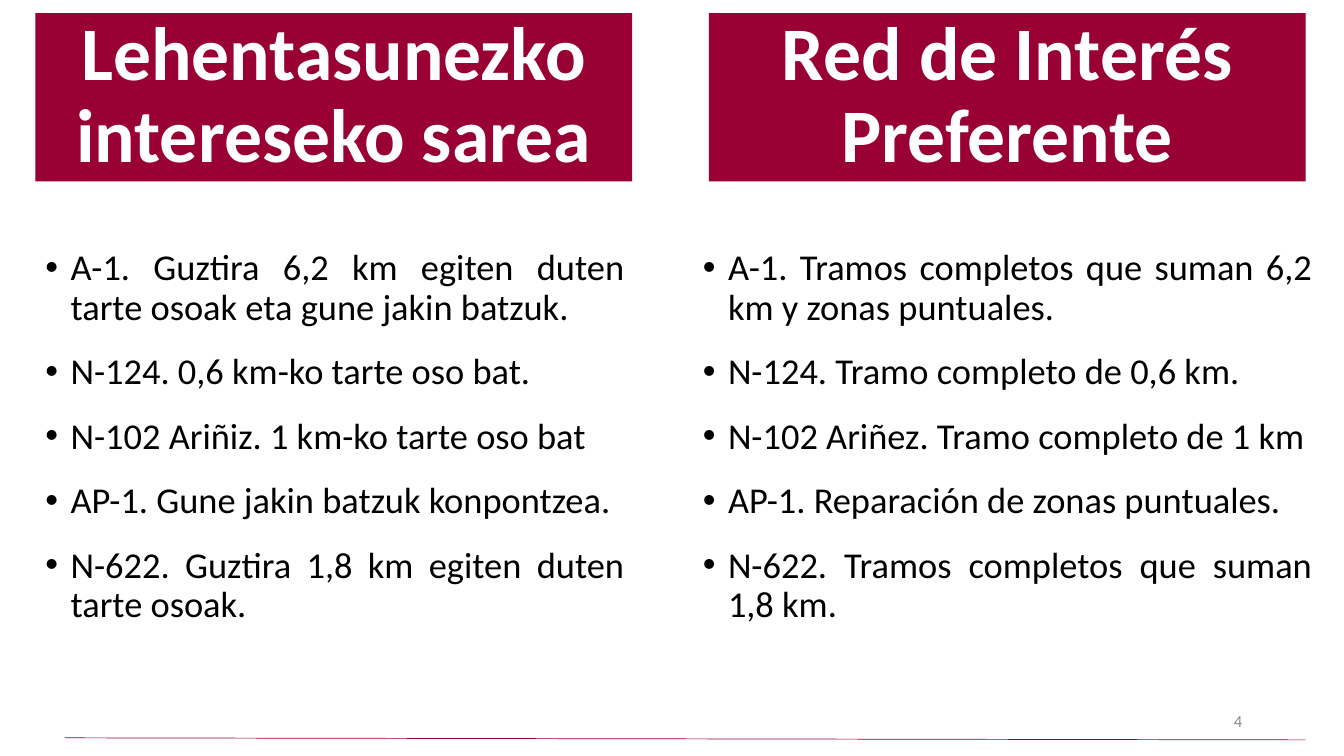
from dataclasses import dataclass

from lxml import etree
from pptx import Presentation
from pptx.dml.color import RGBColor
from pptx.enum.shapes import MSO_CONNECTOR, MSO_SHAPE
from pptx.enum.text import MSO_ANCHOR, MSO_AUTO_SIZE, PP_ALIGN
from pptx.oxml.ns import qn
from pptx.util import Inches, Pt

RECTANGLE = MSO_SHAPE.RECTANGLE
STRAIGHT = MSO_CONNECTOR.STRAIGHT
MIDDLE = MSO_ANCHOR.MIDDLE
NO_FIT = MSO_AUTO_SIZE.NONE
CENTER, JUSTIFY, RIGHT = PP_ALIGN.CENTER, PP_ALIGN.JUSTIFY, PP_ALIGN.RIGHT
TWO_CONTENT_LAYOUT = 3


@dataclass(frozen=True)
class Theme:
    font: str = "Calibri"
    accent: RGBColor = RGBColor(0x99, 0x00, 0x33)
    light: RGBColor = RGBColor(0xFF, 0xFF, 0xFF)
    dark: RGBColor = RGBColor(0x00, 0x00, 0x00)
    muted: RGBColor = RGBColor(0x8C, 0x8C, 0x8C)
    heading_size: int = 54
    list_size: int = 26
    number_size: int = 12
    line_spacing: float = 0.9
    rule_width: float = 0.5


class SlideBuilder:
    def __init__(self, presentation, theme):
        self.theme = theme
        self.width = presentation.slide_width
        self.height = presentation.slide_height
        layout = presentation.slide_layouts[TWO_CONTENT_LAYOUT]
        self.slide = presentation.slides.add_slide(layout)

    def across(self, percent):
        return round(self.width * percent / 100)

    def down(self, percent):
        return round(self.height * percent / 100)

    def box(self, left, top, width, height):
        return self.across(left), self.down(top), self.across(width), self.down(height)

    def place(self, shape, area):
        shape.left, shape.top, shape.width, shape.height = self.box(*area)

    def style(self, paragraph, size, color, alignment, bold=False):
        paragraph.alignment = alignment
        for run in paragraph.runs:
            run.font.name = self.theme.font
            run.font.size = Pt(size)
            run.font.bold = bold
            run.font.color.rgb = color

    def heading(self, shape, text, area):
        self.place(shape, area)
        shape.fill.solid()
        shape.fill.fore_color.rgb = self.theme.accent
        shape.line.fill.background()
        frame = shape.text_frame
        frame.text = text
        frame.word_wrap = True
        frame.auto_size = NO_FIT
        frame.vertical_anchor = MIDDLE
        paragraph = frame.paragraphs[0]
        paragraph.line_spacing = self.theme.line_spacing
        self.style(paragraph, self.theme.heading_size, self.theme.light, CENTER, True)

    def heading_block(self, text, area):
        shape = self.slide.shapes.add_shape(RECTANGLE, *self.box(*area))
        shape.shadow.inherit = False
        self.heading(shape, text, area)

    def bullets(self, shape, items, area):
        self.place(shape, area)
        frame = shape.text_frame
        frame.text = "\n".join(items)
        frame.auto_size = NO_FIT
        frame.margin_top = self.down(9)
        for index, paragraph in enumerate(frame.paragraphs):
            paragraph.line_spacing = self.theme.line_spacing
            paragraph.space_before = Pt(10 if index else 0)
            paragraph.space_after = Pt(8)
            self.style(paragraph, self.theme.list_size, self.theme.dark, JUSTIFY)
            properties = paragraph._p.get_or_add_pPr()
            properties.set("marL", str(Inches(0.25)))
            properties.set("indent", str(-Inches(0.25)))
            etree.SubElement(properties, qn("a:buChar")).set("char", "•")

    def page_number(self, number, area):
        shape = self.slide.shapes.add_textbox(*self.box(*area))
        frame = shape.text_frame
        frame.text = str(number)
        frame.word_wrap = True
        frame.vertical_anchor = MIDDLE
        self.style(frame.paragraphs[0], self.theme.number_size, self.theme.muted, RIGHT)

    def rule(self, start, end):
        connector = self.slide.shapes.add_connector(
            STRAIGHT,
            self.across(start[0]), self.down(start[1]),
            self.across(end[0]), self.down(end[1]),
        )
        connector.line.color.rgb = self.theme.accent
        connector.line.width = Pt(self.theme.rule_width)
        etree.SubElement(connector._element.spPr, qn("a:effectLst"))


BASQUE_ROADS = [
    "A-1. Guztira 6,2 km egiten duten tarte osoak eta gune jakin batzuk.",
    "N-124. 0,6 km-ko tarte oso bat.",
    "N-102 Ariñiz. 1 km-ko tarte oso bat",
    "AP-1. Gune jakin batzuk konpontzea.",
    "N-622. Guztira 1,8 km egiten duten tarte osoak.",
]
SPANISH_ROADS = [
    "A-1. Tramos completos que suman 6,2 km y zonas puntuales.",
    "N-124. Tramo completo de 0,6 km.",
    "N-102 Ariñez. Tramo completo de 1 km",
    "AP-1. Reparación de zonas puntuales.",
    "N-622. Tramos completos que suman 1,8 km.",
]


def main():
    presentation = Presentation()
    presentation.slide_width = Inches(13.33)
    presentation.slide_height = Inches(7.5)
    builder = SlideBuilder(presentation, Theme())
    title, basque_list, spanish_list = builder.slide.placeholders
    heading_top, heading_width, heading_height = 1.73, 44.41, 22.27

    builder.heading(title, "Lehentasunezko intereseko sarea",
                    (2.63, heading_top, heading_width, heading_height))
    builder.heading_block("Red de Interés Preferente",
                          (52.74, heading_top, heading_width, heading_height))
    builder.bullets(basque_list, BASQUE_ROADS, (2.63, 24, 44.64, 54.53))
    builder.bullets(spanish_list, SPANISH_ROADS, (51.54, 24, 46.89, 74.93))
    builder.page_number(4, (70.67, 92.67, 22.5, 5.33))
    builder.rule((4.8, 97.6), (97.15, 97.87))
    presentation.save("out.pptx")


if __name__ == "__main__":
    main()
